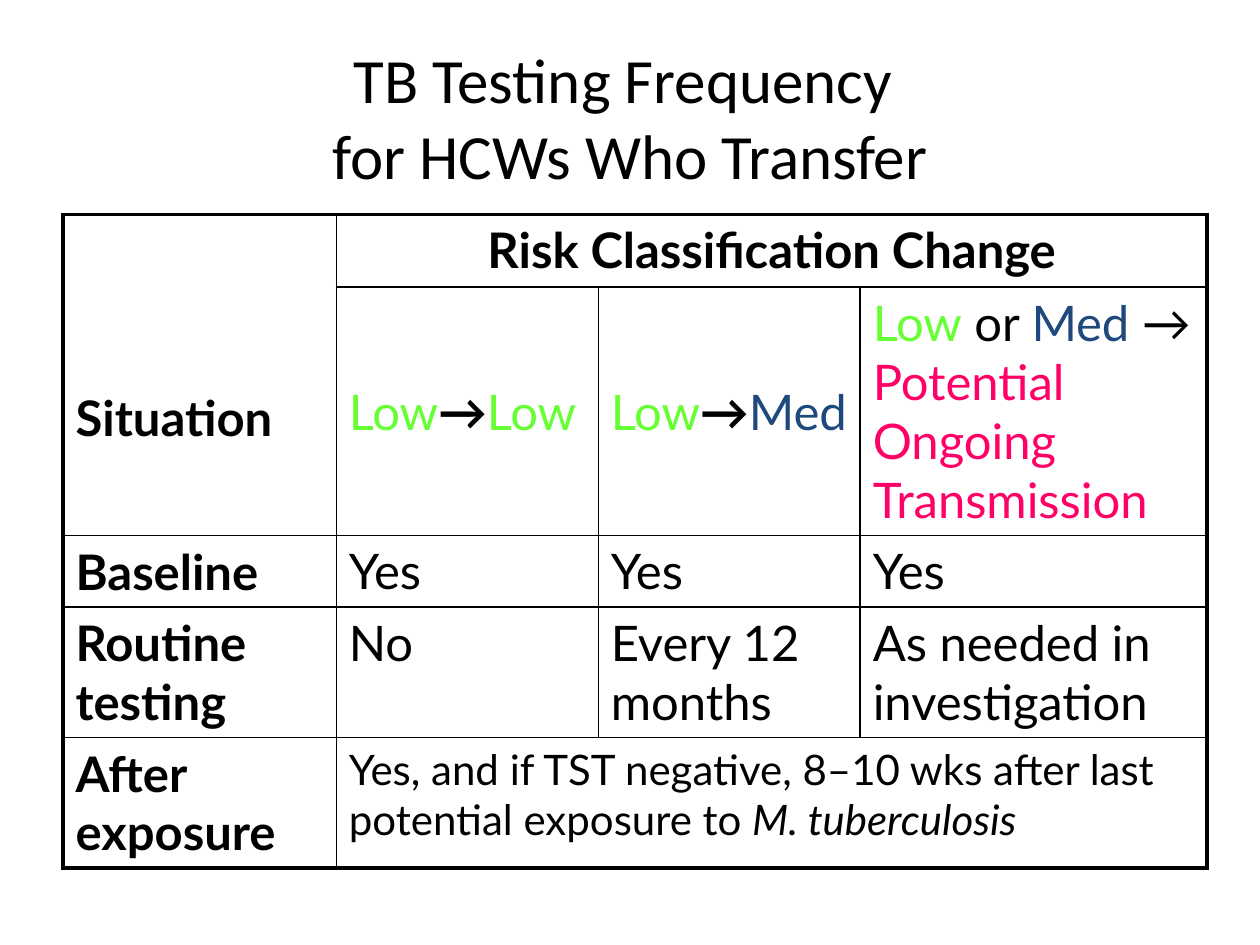
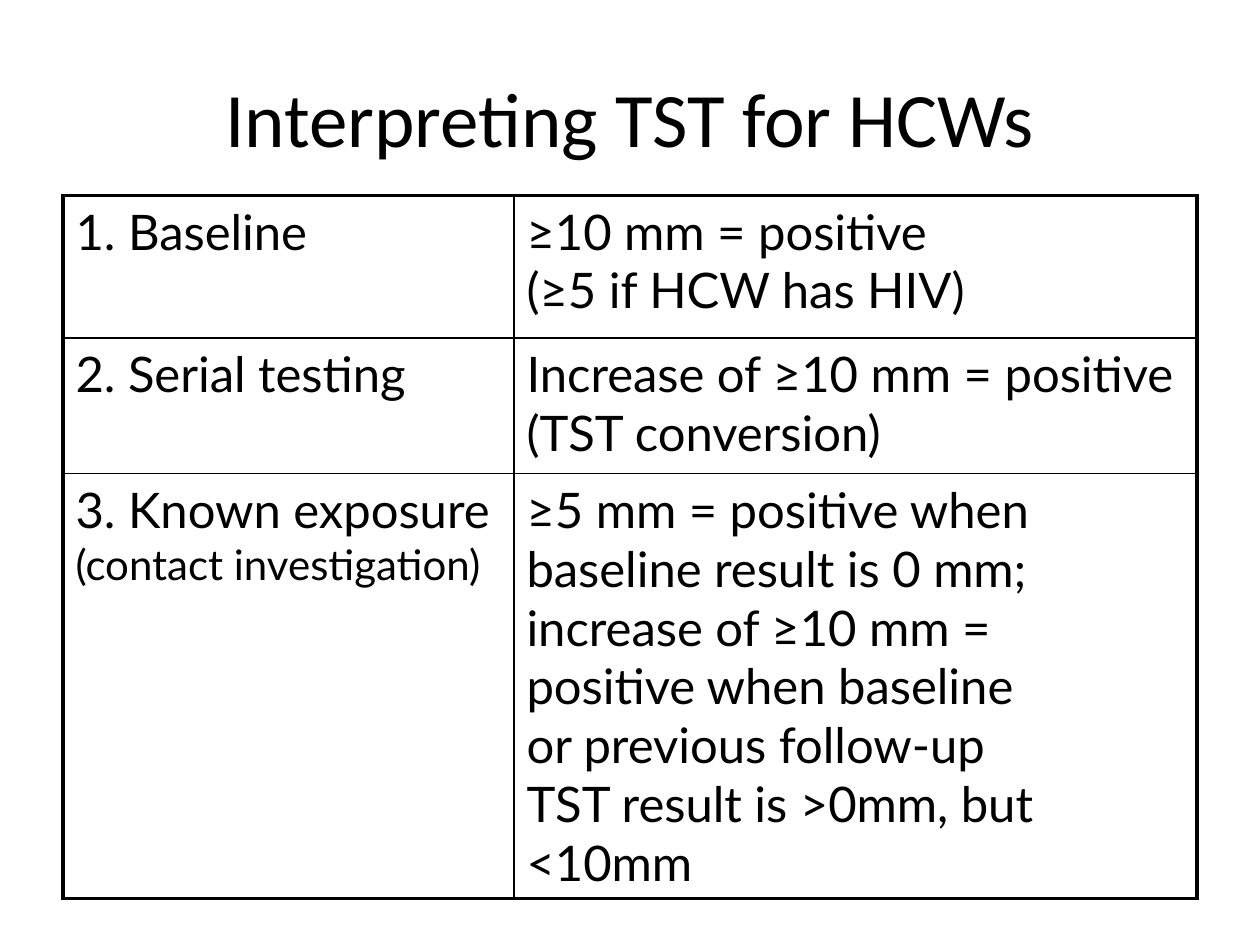
from lxml import etree
from pptx import Presentation
from pptx.dml.color import RGBColor
from pptx.enum import text
from pptx.oxml import ns
from pptx.util import Cm, Pt

COLORS = {"ink": "000000", "low": "66FF33", "medium": "1F497D", "ongoing": "FF0066"}
TITLE_FONT, TABLE_FONT = "Calibri", "Lato"
OUTER_LINE, INNER_LINE = Pt(2.25), Pt(1)
LEFT = 1.27


def write(para, words, size=28, font=TABLE_FONT, color="ink", bold=False, italic=False):
    """Append words to a paragraph; a newline becomes a line break."""
    for number, line in enumerate(words.split("\n")):
        if number:
            para.add_line_break()
        if not line:
            continue
        span = para.add_run()
        span.text = line
        span.font.size = Pt(size)
        span.font.name = font
        span.font.bold = bold
        span.font.italic = italic
        span.font.color.rgb = RGBColor.from_string(COLORS[color])


def add_titled_page(deck, words, size):
    page = deck.slides.add_slide(deck.slide_layouts[5])
    title = page.shapes.title
    title.left, title.top, title.width, title.height = Cm(LEFT), Cm(0.76), Cm(22.86), Cm(3.18)
    frame = title.text_frame
    frame.word_wrap = True
    frame.auto_size = text.MSO_AUTO_SIZE.NONE
    frame.vertical_anchor = text.MSO_ANCHOR.MIDDLE
    para = frame.paragraphs[0]
    para.alignment = text.PP_ALIGN.CENTER
    write(para, words, size=size, font=TITLE_FONT)
    return page


def add_grid(page, top, widths, heights):
    frame = page.shapes.add_table(len(heights), len(widths), Cm(LEFT), Cm(top),
                                  Cm(sum(widths)), Cm(sum(heights)))
    table = frame.table
    table.first_row = table.horz_banding = False
    for column, width in zip(table.columns, widths):
        column.width = Cm(width)
    for row, height in zip(table.rows, heights):
        row.height = Cm(height)
    return table


def fill_cell(cell, *paragraphs, middle=False, align=None):
    """Fill a cell; each paragraph is a list of (words, format) pairs."""
    cell.vertical_anchor = text.MSO_ANCHOR.MIDDLE if middle else text.MSO_ANCHOR.TOP
    frame = cell.text_frame
    for number, pieces in enumerate(paragraphs):
        para = frame.add_paragraph() if number else frame.paragraphs[0]
        para.alignment = align
        for words, style in pieces:
            write(para, words, **style)


def rule_cells(table):
    """Clear the fills and draw thin inner and thick outer borders."""
    rows, columns = len(table.rows), len(table.columns)
    for r in range(rows):
        for c in range(columns):
            cell = table.cell(r, c)
            cell.fill.background()
            tall = cell.span_height if cell.is_merge_origin else 1
            wide = cell.span_width if cell.is_merge_origin else 1
            edges = {"lnL": c == 0, "lnR": c + wide == columns,
                     "lnT": r == 0, "lnB": r + tall == rows}
            properties = cell._tc.get_or_add_tcPr()
            for place, (tag, outer) in enumerate(edges.items()):
                line = etree.Element(ns.qn("a:" + tag), w=str(OUTER_LINE if outer else INNER_LINE))
                fill = etree.SubElement(line, ns.qn("a:solidFill"))
                etree.SubElement(fill, ns.qn("a:srgbClr"), val=COLORS["ink"])
                properties.insert(place, line)


def build_transfer_page(deck):
    page = add_titled_page(deck, "TB Testing Frequency \nfor HCWs Who Transfer", 36)
    table = add_grid(page, 4.32, [5.51, 5.28, 5.28, 6.99], [1.47, 5, 1.45, 2.62, 2.62])
    table.cell(0, 0).merge(table.cell(1, 0))
    table.cell(0, 1).merge(table.cell(0, 3))
    table.cell(4, 1).merge(table.cell(4, 3))
    rule_cells(table)

    bold, low, medium = {"bold": True}, {"color": "low"}, {"color": "medium"}
    situations = {0: "Situation", 2: "Baseline", 3: "Routine testing", 4: "After exposure"}
    for row, words in situations.items():
        fill_cell(table.cell(row, 0), [(words, bold)], middle=True)
    table.cell(0, 0).margin_top = Cm(1.85)
    fill_cell(table.cell(0, 1), [("Risk Classification Change", bold)],
              align=text.PP_ALIGN.CENTER)

    fill_cell(table.cell(1, 1), [("Low", low), ("→", bold), ("Low", low)], middle=True)
    fill_cell(table.cell(1, 2), [("Low", low), ("→", bold), ("Med", medium)], middle=True)
    fill_cell(table.cell(1, 3), [("Low", low), (" or ", {}), ("Med ", medium), ("→ ", {}),
                                 ("Potential Ongoing Transmission", {"color": "ongoing"})])

    answers = [["Yes", "Yes", "Yes"],
               ["No", "Every 12 months", "As needed in investigation"]]
    for row, line in enumerate(answers, 2):
        for column, words in enumerate(line, 1):
            fill_cell(table.cell(row, column), [(words, {})])
    fill_cell(table.cell(4, 1), [
        ("Yes, and if TST negative, 8–10 wks after last potential exposure to ", {"size": 24}),
        ("M. tuberculosis", {"size": 24, "italic": True})])


def build_interpreting_page(deck):
    page = add_titled_page(deck, "Interpreting TST for HCWs", 44)
    table = add_grid(page, 3.94, [9.09, 13.77], [2.87, 2.74, 8.56])
    rule_cells(table)
    exposure_lines = ["≥5 mm = positive when", "baseline result is 0 mm;",
                      "increase of ≥10 mm =", "positive when baseline",
                      "or previous follow-up", "TST result is >0mm, but", "<10mm"]
    fill_cell(table.cell(0, 0), [("1. Baseline", {})])
    fill_cell(table.cell(0, 1), [("≥10 mm = positive \n(≥5 if HCW has HIV)", {})])
    fill_cell(table.cell(1, 0), [("2. Serial testing", {})])
    fill_cell(table.cell(1, 1), [("Increase of ≥10 mm = positive (TST conversion)", {})])
    fill_cell(table.cell(2, 0), [("3. Known exposure\n", {}),
                                 ("(contact investigation)", {"size": 24})])
    fill_cell(table.cell(2, 1), *[[(line, {})] for line in exposure_lines])


def main():
    deck = Presentation()
    deck.slide_width, deck.slide_height = Cm(25.4), Cm(19.05)
    build_transfer_page(deck)
    build_interpreting_page(deck)
    deck.save("out.pptx")


if __name__ == "__main__":
    main()
